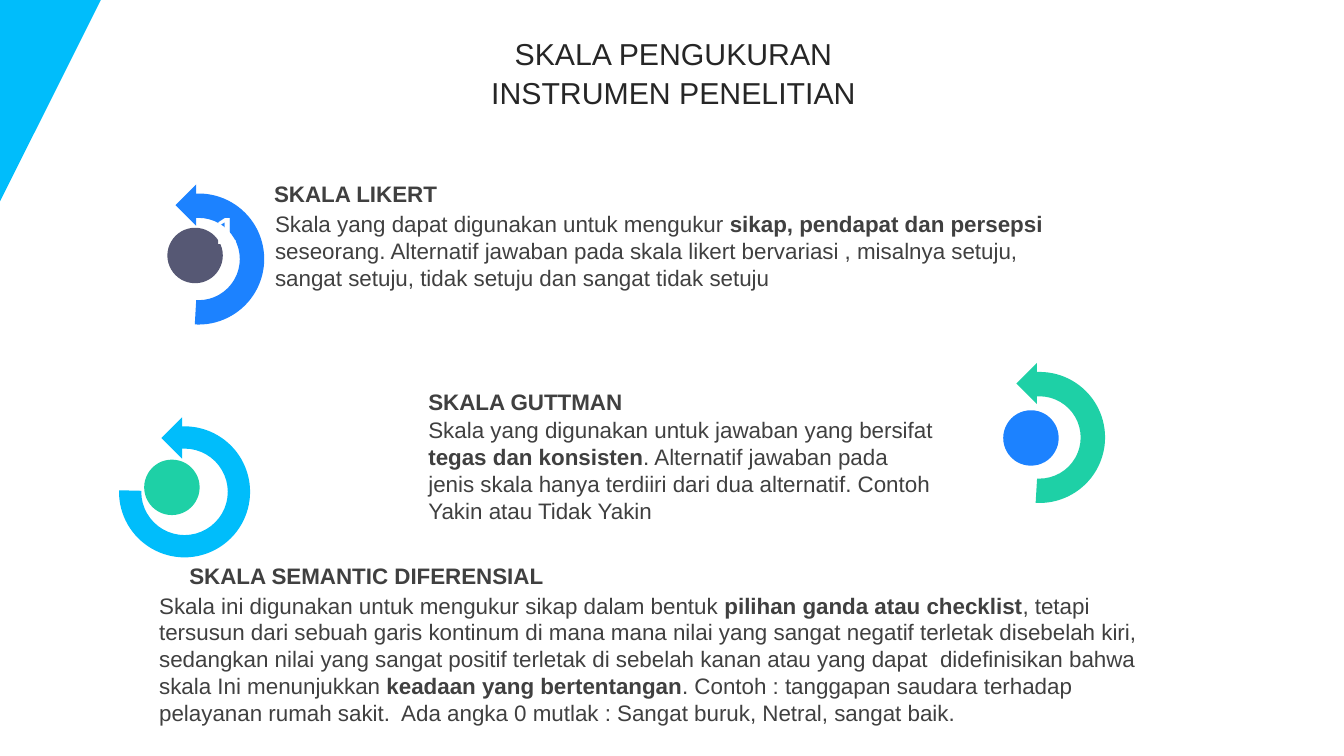
from pptx import Presentation
from pptx import util as u
from pptx.dml import color
from pptx.enum import shapes, text

FONT = "Arial"
SKY, BLUE, GREEN, SLATE = "00BDFB", "1C82FF", "1ED0A6", "565874"
WHITE, TITLE_GREY, TEXT_GREY = "FFFFFF", "262626", "404040"

TITLE_LINES = ["SKALA PENGUKURAN", "INSTRUMEN PENELITIAN"]
STRIPES = [(0, 0.21), (0.28, 0.39), (0.45, 0.66), (0.73, 0.83)]
STRIPE_SLOPE = 2.76

RINGS = [
    ((1.32, 1.92), (0.34, 0.34), BLUE, SLATE, (104.732, 2.031, 0.186)),
    ((9.66, 3.69), (0.29, 0.38), GREEN, BLUE, (104.732, 2.031, 0.186)),
    ((1.18, 4.23), (0.25, 0.33), SKY, GREEN, (104.732, 54.833, 0.17)),
]

SCALES = [
    ("SKALA LIKERT", (2.62, 1.74, 8.15, 0.37), (2.63, 2.04, 8.03, 0.91), [
        ("Skala yang dapat digunakan untuk mengukur ", False),
        ("sikap, pendapat dan persepsi ", True),
        ("seseorang. Alternatif jawaban pada skala likert bervariasi , misalnya setuju, "
         "sangat setuju, tidak setuju dan sangat tidak setuju", False),
    ]),
    ("SKALA GUTTMAN", (4.15, 3.8, 5.33, 0.37), (4.15, 4.08, 5.25, 1.18), [
        ("Skala yang digunakan untuk jawaban yang bersifat ", False),
        ("tegas dan konsisten", True),
        (". Alternatif jawaban pada jenis skala hanya terdiiri dari dua alternatif. "
         "Contoh Yakin atau Tidak Yakin", False),
    ]),
    ("SKALA SEMANTIC DIFERENSIAL", (1.78, 5.53, 10.46, 0.37), (1.48, 5.82, 10.31, 1.45), [
        ("Skala ini digunakan untuk mengukur sikap dalam bentuk ", False),
        ("pilihan ganda atau checklist", True),
        (", tetapi tersusun dari sebuah garis kontinum di mana mana nilai yang sangat "
         "negatif terletak disebelah kiri, sedangkan nilai yang sangat positif terletak "
         "di sebelah kanan atau yang dapat  didefinisikan bahwa skala Ini menunjukkan ", False),
        ("keadaan yang bertentangan", True),
        (". Contoh : tanggapan saudara terhadap pelayanan rumah sakit.  Ada angka 0 "
         "mutlak : Sangat buruk, Netral, sangat baik.", False),
    ]),
]


def rgb(value):
    """Return the colour for a hex string."""
    return color.RGBColor.from_string(value)


def paint(shape, fill):
    """Give a shape a plain fill without line or shadow."""
    shape.shadow.inherit = False
    shape.fill.solid()
    shape.fill.fore_color.rgb = rgb(fill)
    shape.line.fill.background()


def add_run(paragraph, words, size, colour, bold=False):
    """Add one formatted run to a paragraph."""
    run = paragraph.add_run()
    run.text = words
    run.font.name = FONT
    run.font.size = u.Pt(size)
    run.font.bold = bold
    run.font.color.rgb = rgb(colour)


def add_shape(slide, kind, left, top, size, fill, rotation=0):
    """Add a square-boxed preset shape."""
    shape = slide.shapes.add_shape(
        kind, u.Inches(left), u.Inches(top), u.Inches(size), u.Inches(size))
    shape.rotation = rotation
    paint(shape, fill)
    return shape


def add_text(slide, box, runs, size=16, colour=TEXT_GREY):
    """Add a wrapped text box holding one paragraph and return its frame."""
    frame = slide.shapes.add_textbox(*map(u.Inches, box)).text_frame
    frame.word_wrap = True
    for words, bold in runs:
        add_run(frame.paragraphs[0], words, size, colour, bold)
    return frame


def add_stripes(slide):
    """Draw the slanted stripes in the top left corner."""
    builder = None
    for inner, outer in STRIPES:
        corners = [(outer, 0), (0, outer * STRIPE_SLOPE), (0, inner * STRIPE_SLOPE)]
        if builder is None:
            builder = slide.shapes.build_freeform(inner, 0, scale=u.Inches(1))
        else:
            builder.move_to(inner, 0)
        builder.add_line_segments(corners, close=True)
    paint(builder.convert_to_shape(), SKY)


def add_title(slide, box):
    """Place the two-line title in its placeholder."""
    title = slide.shapes.title
    title.left, title.top, title.width, title.height = map(u.Inches, box)
    frame = title.text_frame
    frame.auto_size = text.MSO_AUTO_SIZE.NONE
    frame.vertical_anchor = text.MSO_ANCHOR.MIDDLE
    for index, line in enumerate(TITLE_LINES):
        paragraph = frame.add_paragraph() if index else frame.paragraphs[0]
        paragraph.alignment = text.PP_ALIGN.CENTER
        paragraph.line_spacing = 0.7
        paragraph.space_before = u.Pt(10 if index else 0)
        add_run(paragraph, line, 21.6, TITLE_GREY)


def add_ring(slide, origin, dot_offset, ring_colour, dot_colour, adjustments):
    """Draw a dot inside a curved arrow."""
    left, top = origin
    add_shape(slide, shapes.MSO_SHAPE.OVAL,
              left + dot_offset[0], top + dot_offset[1], 0.55, dot_colour)
    arc = add_shape(slide, shapes.MSO_SHAPE.BLOCK_ARC, left, top, 1.3, ring_colour, 90)
    for index, value in enumerate(adjustments):
        arc.adjustments[index] = value
    add_shape(slide, shapes.MSO_SHAPE.RIGHT_TRIANGLE,
              left + 0.48, top - 0.03, 0.29, ring_colour, 45)


def add_number(slide, box):
    """Place the white number beside the first dot."""
    frame = add_text(slide, box, [("1", True)], 27, WHITE)
    frame.vertical_anchor = text.MSO_ANCHOR.MIDDLE
    frame.paragraphs[0].alignment = text.PP_ALIGN.CENTER


def add_scale(slide, heading, heading_box, body_box, runs):
    """Place a scale's description and its heading."""
    add_text(slide, body_box, runs)
    add_text(slide, heading_box, [(heading, True)])


def main():
    """Build and save the slide."""
    presentation = Presentation()
    presentation.slide_width = u.Inches(13.33)
    presentation.slide_height = u.Inches(7.5)
    slide = presentation.slides.add_slide(presentation.slide_layouts[5])
    add_stripes(slide)
    add_title(slide, (0.35, 0.37, 12.66, 0.79))
    for ring in RINGS:
        add_ring(slide, *ring)
    add_number(slide, (2.02, 2, 0.45, 0.56))
    for scale in SCALES:
        add_scale(slide, *scale)
    presentation.save("out.pptx")


if __name__ == "__main__":
    main()
